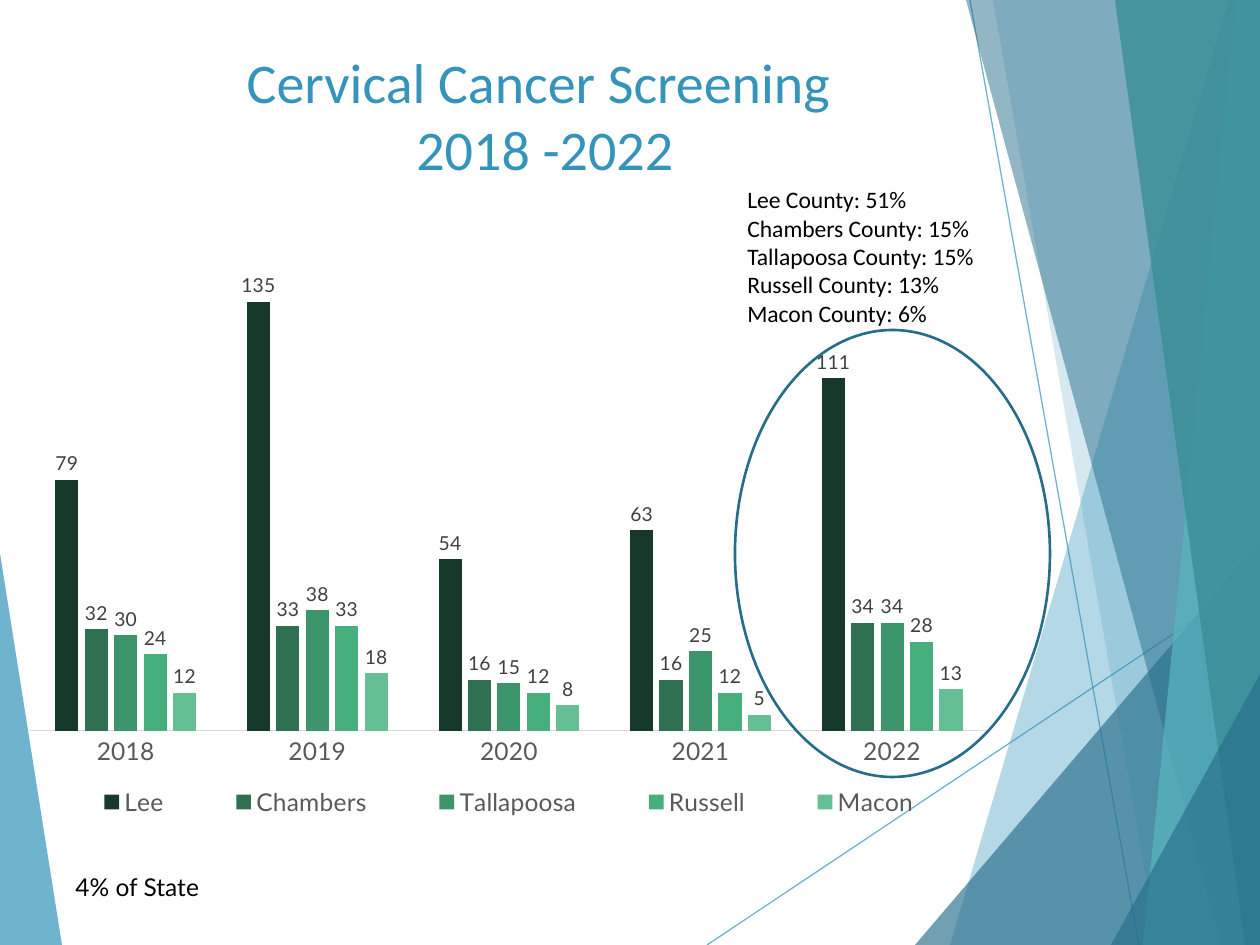
from lxml.etree import SubElement
from pptx import Presentation
from pptx.chart.data import CategoryChartData
from pptx.dml.color import RGBColor
from pptx.enum.chart import XL_CHART_TYPE, XL_LABEL_POSITION, XL_LEGEND_POSITION, XL_TICK_MARK
from pptx.enum.shapes import MSO_CONNECTOR, MSO_SHAPE
from pptx.enum.text import MSO_ANCHOR, PP_ALIGN
from pptx.oxml import parse_xml
from pptx.oxml.ns import nsdecls, qn
from pptx.util import Emu, Pt

W, H = 1260, 945
EMU_PER_PX = 914400 / 126
BLUE, DEEP, BLACK = "3494BA", "276F8B", "000000"

FACETS = [
    (BLUE, 70, [(0, 553), (62, H), (0, H)]),
    (BLUE, 36, [(1229, 0), (950, H), (W, H), (W, 0)]),
    (BLUE, 20, [(993, 0), (1158, H), (W, H), (W, 0)]),
    (DEEP, 66, [(915, H), (W, 541), (W, H)]),
    (DEEP, 50, [(966, 0), (1222, H), (W, H), (W, 0)]),
    ("58B6C0", 70, [(1236, 0), (1143, H), (W, H), (W, 0)]),
    ("3A8F98", 82, [(1115, 0), (1245, H), (W, H), (W, 0)]),
    (DEEP, 66, [(1111, H), (W, 674), (W, H)]),
]
RAYS = [(707, H, W, 576), (970, 0, 1139, H)]

YEARS = ["2018", "2019", "2020", "2021", "2022"]
COUNTIES = [
    ("Lee", "173929", [79, 135, 54, 63, 111]),
    ("Chambers", "2E7051", [32, 33, 16, 16, 34]),
    ("Tallapoosa", "3D956B", [30, 38, 15, 25, 34]),
    ("Russell", "47AF7D", [24, 33, 12, 12, 28]),
    ("Macon", "64C094", [12, 18, 8, 5, 13]),
]
SHARES = [
    "Lee County: 51%",
    "Chambers County: 15%",
    "Tallapoosa County: 15%",
    "Russell County: 13%",
    "Macon County: 6%",
]


def px(n):
    return Emu(round(n * EMU_PER_PX))


def rgb(code):
    return RGBColor.from_string(code)


def set_alpha(fill_parent, percent):
    color = fill_parent.find(".//" + qn("a:srgbClr"))
    SubElement(color, qn("a:alpha")).set("val", str(percent * 1000))


def style_font(font, size, name, color):
    font.size, font.name = Pt(size), name
    font.color.rgb = rgb(color)


def add_facet(s, color, alpha, points):
    builder = s.shapes.build_freeform(*points[0], scale=EMU_PER_PX)
    builder.add_line_segments(points[1:], close=True)
    sp = builder.convert_to_shape()
    sp.shadow.inherit = False
    sp.fill.solid()
    sp.fill.fore_color.rgb = rgb(color)
    sp.line.fill.background()
    set_alpha(sp.fill._xPr, alpha)


def add_ray(s, ends):
    ray = s.shapes.add_connector(MSO_CONNECTOR.STRAIGHT, *map(px, ends))
    ray.line.width = Pt(0.75)
    ray.line.color.rgb = rgb(BLUE)
    set_alpha(ray.line._ln, 70)
    SubElement(ray._element.spPr, qn("a:effectLst"))


def add_backdrop(s):
    add_facet(s, *FACETS[0])
    for ends in RAYS:
        add_ray(s, ends)
    for facet in FACETS[1:]:
        add_facet(s, *facet)


def add_text(s, box, paragraphs, size, name, color, align=PP_ALIGN.LEFT):
    tf = s.shapes.add_textbox(*map(px, box)).text_frame
    tf.word_wrap = True
    tf.vertical_anchor = MSO_ANCHOR.TOP
    for i, lines in enumerate(paragraphs):
        p = tf.paragraphs[0] if i == 0 else tf.add_paragraph()
        p.alignment = align
        for j, line in enumerate(lines):
            if j:
                p.add_line_break()
            r = p.add_run()
            r.text = line
            style_font(r.font, size, name, color)


def set_layout(element, x, y, w, h, inner=False):
    for old in element.findall(qn("c:layout")):
        element.remove(old)
    target = '<c:layoutTarget val="inner"/>' if inner else ""
    layout = parse_xml(
        f'<c:layout {nsdecls("c")}><c:manualLayout>{target}'
        '<c:xMode val="edge"/><c:yMode val="edge"/>'
        f'<c:x val="{x}"/><c:y val="{y}"/><c:w val="{w}"/><c:h val="{h}"/>'
        "</c:manualLayout></c:layout>"
    )
    element.insert(0 if inner else 1, layout)


def style_axes(chart):
    axis = chart.category_axis
    axis.major_tick_mark = axis.minor_tick_mark = XL_TICK_MARK.NONE
    axis.format.line.color.rgb = rgb("D9D9D9")
    axis.format.line.width = Pt(0.75)
    style_font(axis.tick_labels.font, 14, "Lato", "595959")
    values = chart.value_axis
    values.minimum_scale, values.maximum_scale = 0, 160
    values.has_major_gridlines = False
    values.visible = False


def add_screening_chart(s, box):
    data = CategoryChartData()
    data.categories = YEARS
    for name, _, counts in COUNTIES:
        data.add_series(name, counts)
    chart = s.shapes.add_chart(XL_CHART_TYPE.COLUMN_CLUSTERED, *map(px, box), data).chart
    chart.has_title = False
    style_font(chart.font, 10, "Lato", BLACK)
    style_axes(chart)
    plot = chart.plots[0]
    plot.gap_width, plot.overlap, plot.vary_by_categories = 219, -27, False
    for series, (_, color, _) in zip(plot.series, COUNTIES):
        series.format.fill.solid()
        series.format.fill.fore_color.rgb = rgb(color)
        labels = series.data_labels
        labels.show_value = True
        labels.position = XL_LABEL_POSITION.OUTSIDE_END
        style_font(labels.font, 11, "Lato", "404040")
    chart.has_legend = True
    legend = chart.legend
    legend.position = XL_LEGEND_POSITION.BOTTOM
    legend.include_in_layout = False
    style_font(legend.font, 14, "Lato", "595959")
    set_layout(legend._element, 0.03, 0.92, 0.94, 0.07)
    plot_area = chart._chartSpace.chart.plotArea
    set_layout(plot_area, 0.02, 0.02, 0.96, 0.82, inner=True)


def add_highlight(s, box):
    sp = s.shapes.add_shape(MSO_SHAPE.OVAL, *map(px, box))
    sp.shadow.inherit = False
    sp.fill.background()
    sp.line.color.rgb = rgb("266D8A")
    sp.line.width = Pt(1.5)


def main():
    prs = Presentation()
    prs.slide_width, prs.slide_height = px(W), px(H)
    s = prs.slides.add_slide(prs.slide_layouts[6])
    add_backdrop(s)
    title = [["Cervical Cancer Screening ", "2018 -2022"]]
    add_text(s, (-1, 41, 1092, 170), title, 32, "Calibri", BLUE, PP_ALIGN.CENTER)
    add_text(s, (63, 866, 210, 43), [["4% of State"]], 14, "Lato", BLACK)
    add_screening_chart(s, (10, 210, 998, 620))
    add_highlight(s, (735, 330, 315, 447))
    shares = [[share] for share in SHARES]
    add_text(s, (735, 179, 291, 156), shares, 13.5, "Calibri", BLACK)
    prs.save("out.pptx")


if __name__ == "__main__":
    main()
